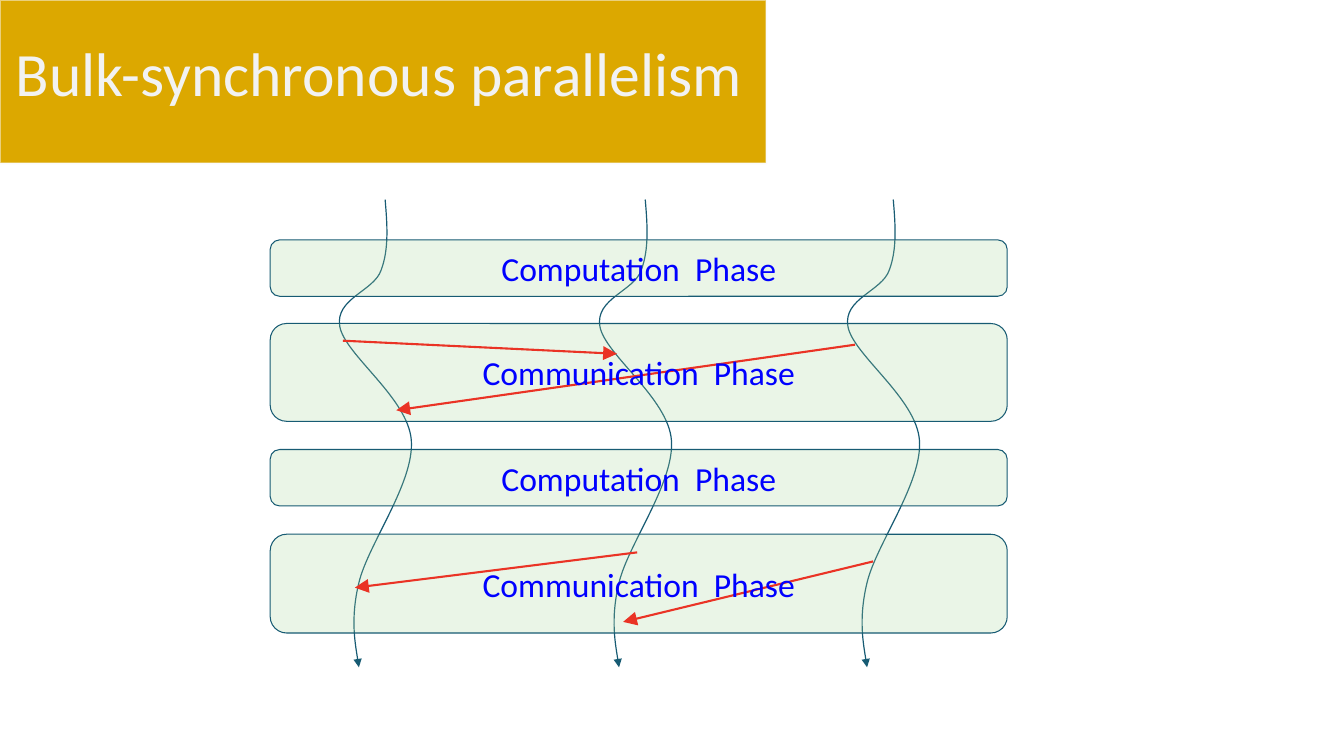
from lxml import etree
from pptx import Presentation
from pptx.dml.color import RGBColor
from pptx.enum.shapes import MSO_CONNECTOR as Connector, MSO_SHAPE as Shape
from pptx.enum.text import MSO_ANCHOR as Anchor, PP_ALIGN as Align
from pptx.oxml.ns import qn
from pptx.util import Inches, Pt

# Content, in inches
TITLE = "Bulk-synchronous parallelism"
COMPUTATION = [("Computation  Phase", 2.38, 0.56), ("Computation  Phase", 4.46, 0.56)]
COMMUNICATION = [("Communication  Phase", 3.21, 0.97), ("Communication  Phase", 5.3, 0.98)]
PHASE_LEFT, PHASE_WIDTH = 2.68, 7.31
MESSAGES = [  # from, to
    ((3.4, 3.38), (6.12, 3.51)),
    ((8.48, 3.42), (3.93, 4.07)),
    ((6.32, 5.48), (3.52, 5.83)),
    ((8.66, 5.57), (6.18, 6.17)),
]
THREAD_LEFTS = [3.37, 5.95, 8.41]
THREAD_TOP = 1.98
THREAD_START = (0.45, 0)
THREAD_CURVES = [  # two control points and an end, from the thread's top left
    ((0.47, 0.24), (0.49, 0.49), (0.41, 0.7)),
    ((0.34, 0.91), (-0.05, 0.98), (0, 1.26)),
    ((0.05, 1.54), (0.68, 1.97), (0.71, 2.39)),
    ((0.74, 2.81), (0.28, 3.42), (0.19, 3.8)),
    ((0.1, 4.17), (0.19, 4.64), (0.19, 4.64)),
]

THEME = {
    "font": "Calibri", "title_size": 44, "phase_size": 24,
    "panel": "DCA800", "panel_line": "F9F9F9", "title": "F2F2F2",
    "phase": "A9D89D", "phase_text": "0000FF",
    "thread": "175B73", "message": "FF0000",
}


def set_alpha(fill_parent, percent):
    color = next(fill_parent.iter(qn("a:srgbClr")))
    etree.SubElement(color, qn("a:alpha")).set("val", str(percent * 1000))


def set_line(shape, color, width):
    shape.line.color.rgb = RGBColor.from_string(color)
    shape.line.width = Pt(width)


def add_arrowhead(shape, size):
    head = etree.SubElement(shape.line._get_or_add_ln(), qn("a:tailEnd"))
    for name, value in (("type", "triangle"), ("w", size), ("len", size)):
        head.set(name, value)


def write_text(shape, text, size, color, align=Align.LEFT, spacing=1.0):
    frame = shape.text_frame
    frame.word_wrap = True
    frame.vertical_anchor = Anchor.MIDDLE
    paragraph = frame.paragraphs[0]
    paragraph.alignment = align
    paragraph.line_spacing = spacing
    run = paragraph.add_run()
    run.text = text
    run.font.name = THEME["font"]
    run.font.size = Pt(size)
    run.font.color.rgb = RGBColor.from_string(color)


def add_box(slide, kind, box, fill, line, width):
    shape = slide.shapes.add_shape(kind, *map(Inches, box))
    shape.shadow.inherit = False
    shape.fill.solid()
    shape.fill.fore_color.rgb = RGBColor.from_string(fill)
    set_line(shape, line, width)
    return shape


def add_phases(slide, phases):
    for label, top, height in phases:
        shape = add_box(slide, Shape.ROUNDED_RECTANGLE, (PHASE_LEFT, top, PHASE_WIDTH, height),
                        THEME["phase"], THEME["thread"], 0.75)
        set_alpha(shape._element.spPr.find(qn("a:solidFill")), 24)
        write_text(shape, label, THEME["phase_size"], THEME["phase_text"], align=Align.CENTER)


def bend_segments(shape, curves):
    """Turn each straight segment into a cubic curve with its two control points."""
    segments = list(shape._element.iter(qn("a:lnTo")))
    for segment, (first, second, _) in zip(segments, curves):
        segment.tag = qn("a:cubicBezTo")
        for index, (x, y) in enumerate((first, second)):
            point = etree.Element(qn("a:pt"))
            point.set("x", str(Inches(x)))
            point.set("y", str(Inches(y)))
            segment.insert(index, point)


def add_thread(slide, left):
    stops = [THREAD_START] + [curve[-1] for curve in THREAD_CURVES]
    points = [(Inches(left + x), Inches(THREAD_TOP + y)) for x, y in stops]
    builder = slide.shapes.build_freeform(*points[0])
    builder.add_line_segments(points[1:], close=False)
    thread = builder.convert_to_shape()
    bend_segments(thread, THREAD_CURVES)
    thread.shadow.inherit = False
    thread.fill.background()
    set_line(thread, THEME["thread"], 0.85)
    add_arrowhead(thread, "med")


def add_message(slide, start, end):
    message = slide.shapes.add_connector(Connector.STRAIGHT, *map(Inches, start + end))
    set_line(message, THEME["message"], 1.5)
    add_arrowhead(message, "lg")
    etree.SubElement(message._element.spPr, qn("a:effectLst"))


def main():
    presentation = Presentation()
    presentation.slide_width, presentation.slide_height = Inches(13.33), Inches(7.5)
    slide = presentation.slides.add_slide(presentation.slide_layouts[6])

    # Title on its panel
    panel = add_box(slide, Shape.FLOWCHART_PROCESS, (0, 0, 7.6, 1.62),
                    THEME["panel"], THEME["panel_line"], 1.35)
    set_alpha(panel.line._get_or_add_ln(), 50)
    title = slide.shapes.add_textbox(*map(Inches, (0.06, 0.03, 7.51, 1.45)))
    write_text(title, TITLE, THEME["title_size"], THEME["title"], spacing=0.9)

    # Threads, phases and the messages between threads
    for left in THREAD_LEFTS:
        add_thread(slide, left)
    add_phases(slide, COMPUTATION)
    for start, end in MESSAGES:
        add_message(slide, start, end)
    add_phases(slide, COMMUNICATION)

    presentation.save("out.pptx")


if __name__ == "__main__":
    main()
